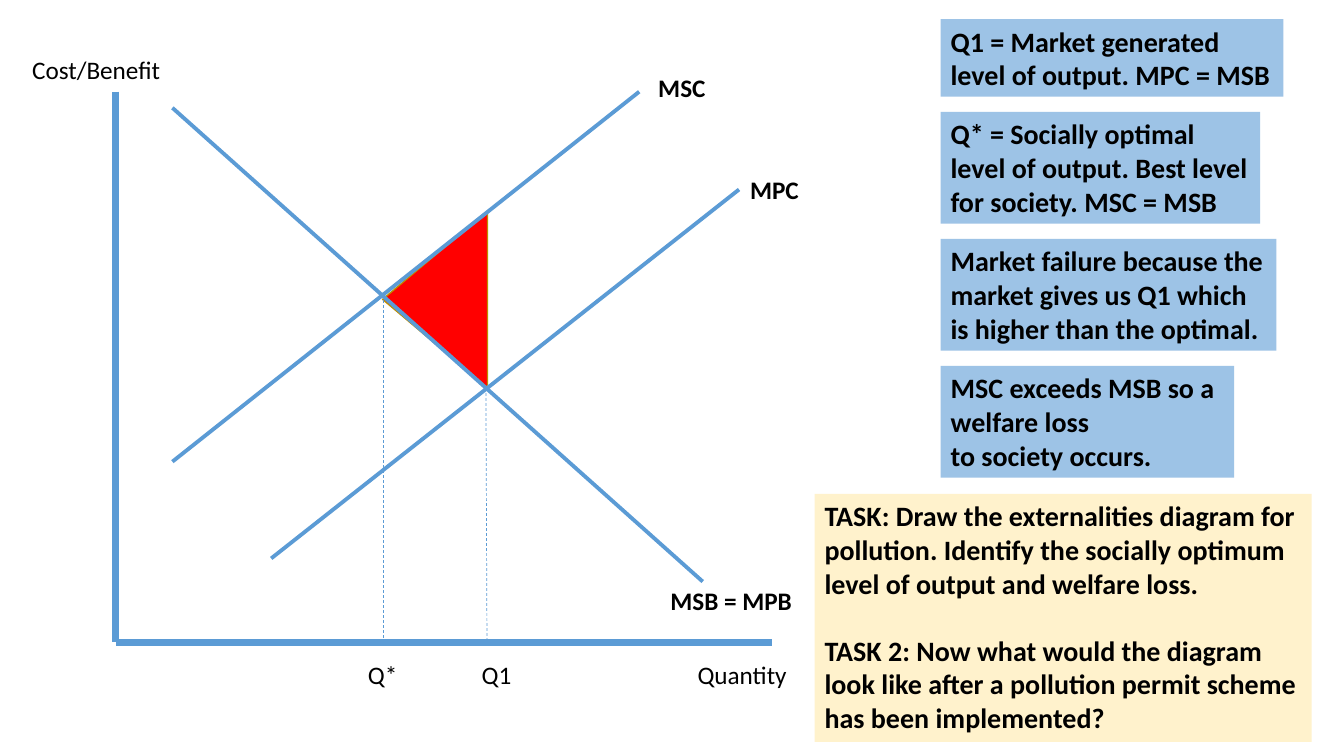
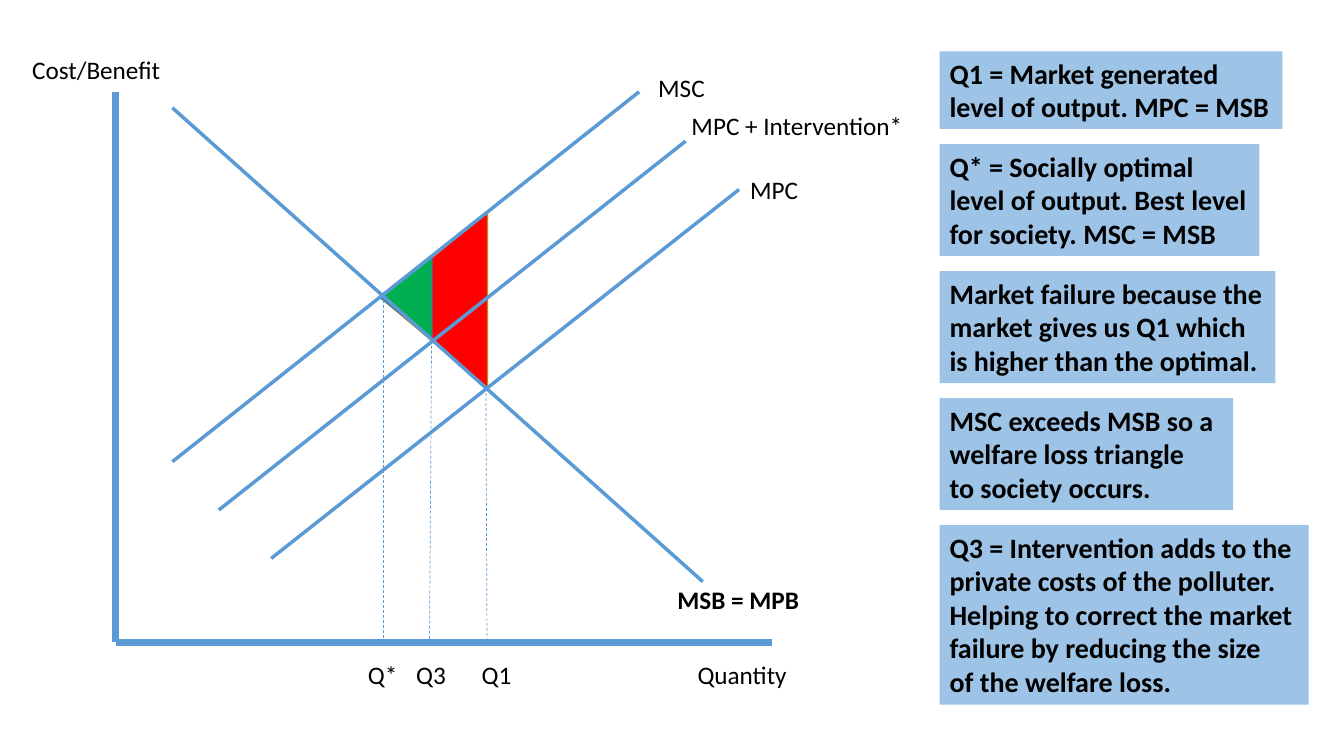
import pptx
import pptx.dml.color
import pptx.enum.dml
import pptx.enum.shapes
import pptx.enum.text
import pptx.oxml
import pptx.oxml.ns
import pptx.util

Inches = pptx.util.Inches
Pt = pptx.util.Pt
RGBColor = pptx.dml.color.RGBColor

BLACK = RGBColor(0x00, 0x00, 0x00)
BLUE = RGBColor(0x5B, 0x9B, 0xD5)
DARK_BLUE = RGBColor(0x43, 0x73, 0x9E)
LIGHT_BLUE = RGBColor(0x9D, 0xC3, 0xE6)
CREAM = RGBColor(0xFF, 0xF2, 0xCC)
GOLD = RGBColor(0xBD, 0x8E, 0x00)
RED = RGBColor(0xFF, 0x00, 0x00)
GREEN = RGBColor(0x00, 0xB0, 0x50)

FONT = "Calibri"
AXIS_LEFT, AXIS_TOP, AXIS_WIDTH, AXIS_HEIGHT = 1.15, 0.91, 6.51, 5.46
NOTE_GAP = 0.15

MSB_CURVE = (0.56, 0.16, 5.82, 4.86)
MPC_CURVE = (1.54, 4.63, 6.18, 0.97)
MSC_CURVE = (0.56, 3.67, 5.19, 0)
INTERVENTION_CURVE = (1.02, 4.15, 5.65, 0.49)

OPTIMAL = ("Q*", 2.4, 2.65, 2.02, 2.65)
MARKET = ("Q1", 3.53, 3.67, 2.99, 3.68)
CORRECTED = ("Q3", 2.88, 3.13, 2.52, 3.11)

WELFARE_LOSS = (2.29, 1.54, 1.75, 1.04, RED, GOLD)
REDUCED_LOSS = (2.47, 1.79, 0.82, 0.51, GREEN, DARK_BLUE)

COMMON_NOTES = [
    ("Q1 = Market generated\nlevel of output. MPC = MSB", 3.4),
    ("Q* = Socially optimal\nlevel of output. Best level\nfor society. MSC = MSB", 3.17),
    ("Market failure because the\nmarket gives us Q1 which\nis higher than the optimal.", 3.33),
]
TASKS = [
    "TASK: Draw the externalities diagram for pollution. "
    "Identify the socially optimum level of output and welfare loss.",
    "TASK 2: Now what would the diagram look like after a pollution "
    "permit scheme has been implemented?",
]


def add_text(slide, paragraphs, left, top, width, height=0.4, size=18,
             bold=False, fill=None, wrap=False, align=None, space_before=0):
    box = slide.shapes.add_textbox(Inches(left), Inches(top), Inches(width), Inches(height))
    if fill is not None:
        box.fill.solid()
        box.fill.fore_color.rgb = fill
    frame = box.text_frame
    frame.word_wrap = wrap
    frame.auto_size = pptx.enum.text.MSO_AUTO_SIZE.SHAPE_TO_FIT_TEXT
    for index, text in enumerate(paragraphs):
        paragraph = frame.add_paragraph() if index else frame.paragraphs[0]
        paragraph.text = text
        paragraph.alignment = align
        if index:
            paragraph.space_before = Pt(space_before)
        for run in paragraph.runs:
            run.font.name = FONT
            run.font.size = Pt(size)
            run.font.bold = bold
            run.font.color.rgb = BLACK


def add_line(slide, left, top, points, weight, dashed=False):
    x1, y1, x2, y2 = points
    line = slide.shapes.add_connector(
        pptx.enum.shapes.MSO_CONNECTOR.STRAIGHT,
        Inches(left + x1), Inches(top + y1), Inches(left + x2), Inches(top + y2))
    line.line.color.rgb = BLUE
    line.line.width = Pt(weight)
    if dashed:
        line.line.dash_style = pptx.enum.dml.MSO_LINE.DASH
    properties = line._element.spPr
    properties.append(properties.makeelement(pptx.oxml.ns.qn("a:effectLst"), {}))


def add_triangle(slide, left, top, triangle):
    x, y, width, height, fill, outline = triangle
    shape = slide.shapes.add_shape(
        pptx.enum.shapes.MSO_SHAPE.ISOSCELES_TRIANGLE,
        Inches(left + x), Inches(top + y), Inches(width), Inches(height))
    shape.rotation = 270
    shape.shadow.inherit = False
    shape.fill.solid()
    shape.fill.fore_color.rgb = fill
    shape.line.color.rgb = outline
    shape.line.width = Pt(1)


def draw_diagram(slide, left, top, width, height, triangles, quantities,
                 curves, weight, labels):
    for triangle in triangles:
        add_triangle(slide, left, top, triangle)
    add_line(slide, left, top, (0, 0, 0, height), 5)
    add_line(slide, left, top, (0, height, width, height), 5)
    add_text(slide, ["Cost/Benefit"], left - 0.93, top - 0.42, 1.49)
    add_text(slide, ["Quantity"], left + width - 0.84, top + height + 0.12, 1.1)
    for name, label_x, start_x, start_y, end_x in quantities:
        add_line(slide, left, top, (start_x, start_y, end_x, height), 0.5, dashed=True)
        add_text(slide, [name], left + label_x, top + height + 0.12, 0.5)
    for curve in curves:
        add_line(slide, left, top, curve, weight)
    for text, x, y, label_width, bold in labels:
        add_text(slide, [text], left + x, top + y, label_width, bold=bold)


def draw_notes(slide, left, top, notes):
    for text, width in notes:
        height = round(0.1 + 0.336 * len(text.splitlines()), 2)
        add_text(slide, [text], left, top, width, height, size=20, bold=True, fill=LIGHT_BLUE)
        top += height + NOTE_GAP


def draw_tasks(slide, left, top, width, height):
    add_text(slide, TASKS, left, top, width, height, size=20, bold=True,
             fill=CREAM, wrap=True, space_before=24)


def build_externality_slide(slide):
    draw_diagram(
        slide, AXIS_LEFT, AXIS_TOP, AXIS_WIDTH, AXIS_HEIGHT,
        triangles=[WELFARE_LOSS],
        quantities=[OPTIMAL, MARKET],
        curves=[MSB_CURVE, MPC_CURVE, MSC_CURVE],
        weight=2.75,
        labels=[("MSB = MPB", 5.4, 4.85, 1.42, True),
                ("MPC", 6.19, 0.77, 0.69, True),
                ("MSC", 5.28, -0.24, 0.68, True)])
    draw_notes(slide, 9.33, 0.19, COMMON_NOTES + [
        ("MSC exceeds MSB so a\nwelfare loss\nto society occurs.", 2.91)])
    draw_tasks(slide, 8.08, 4.9, 4.93, 2.46)


def build_intervention_slide(slide):
    draw_diagram(
        slide, AXIS_LEFT, AXIS_TOP, AXIS_WIDTH, AXIS_HEIGHT,
        triangles=[WELFARE_LOSS, REDUCED_LOSS],
        quantities=[OPTIMAL, CORRECTED, MARKET],
        curves=[MSB_CURVE, MPC_CURVE, MSC_CURVE, INTERVENTION_CURVE],
        weight=2.5,
        labels=[("MSB = MPB", 5.47, 4.84, 1.42, True),
                ("MPC", 6.19, 0.77, 0.68, False),
                ("MSC", 5.28, -0.24, 0.67, False),
                ("MPC + Intervention*", 5.61, 0.14, 2.32, False)])
    draw_notes(slide, 9.32, 0.51, COMMON_NOTES + [
        ("MSC exceeds MSB so a\nwelfare loss triangle\nto society occurs.", 2.91),
        ("Q3 = Intervention adds to the\nprivate costs of the polluter.\n"
         "Helping to correct the market\nfailure by reducing the size\n"
         "of the welfare loss.", 3.66)])


def main():
    presentation = pptx.Presentation()
    presentation.slide_width = Inches(13.33)
    presentation.slide_height = Inches(7.5)
    for build in (build_externality_slide, build_intervention_slide):
        build(presentation.slides.add_slide(presentation.slide_layouts[6]))
    presentation.save("out.pptx")


if __name__ == "__main__":
    main()
